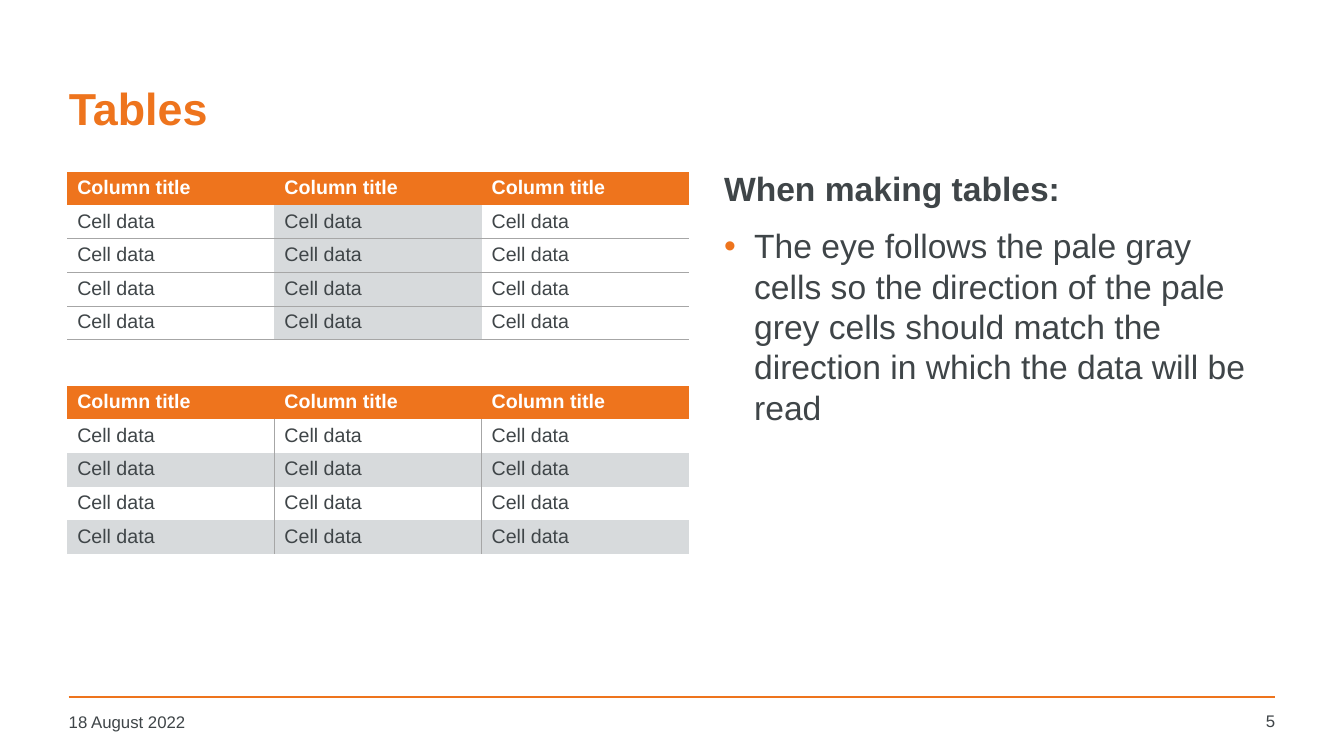
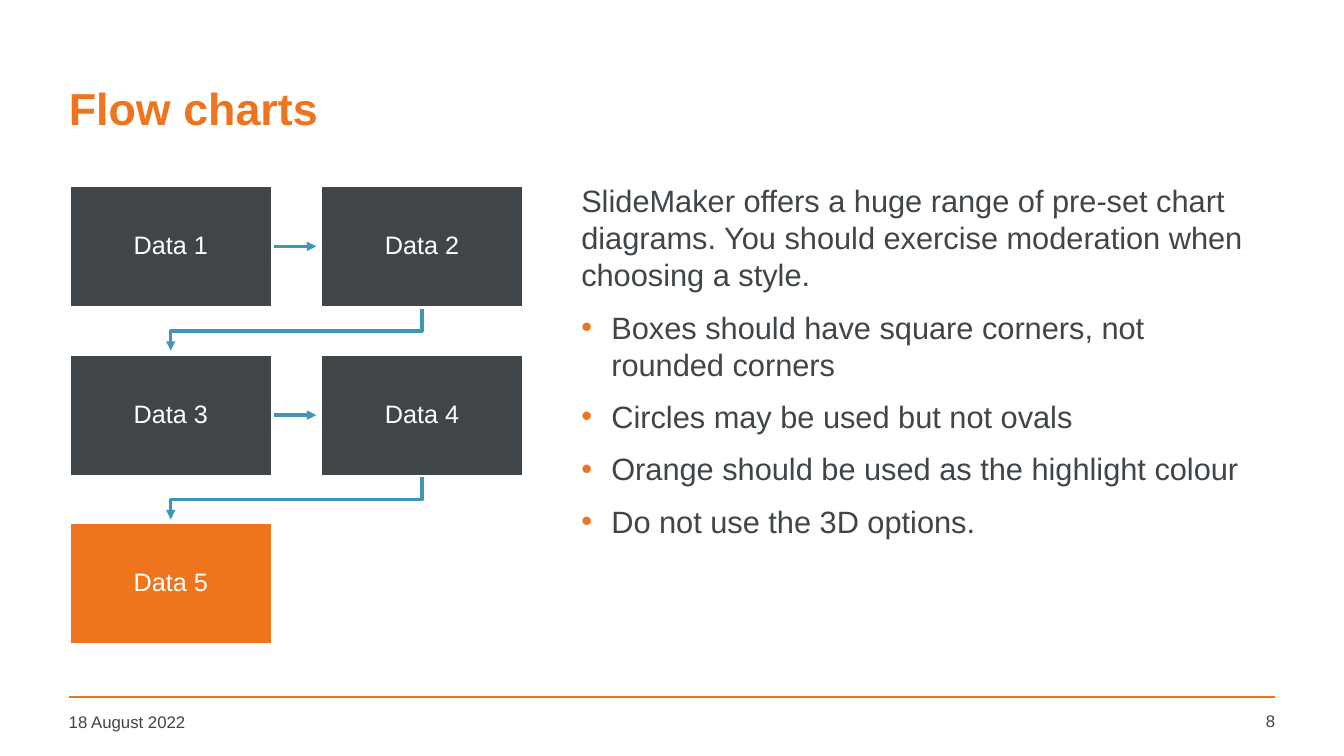
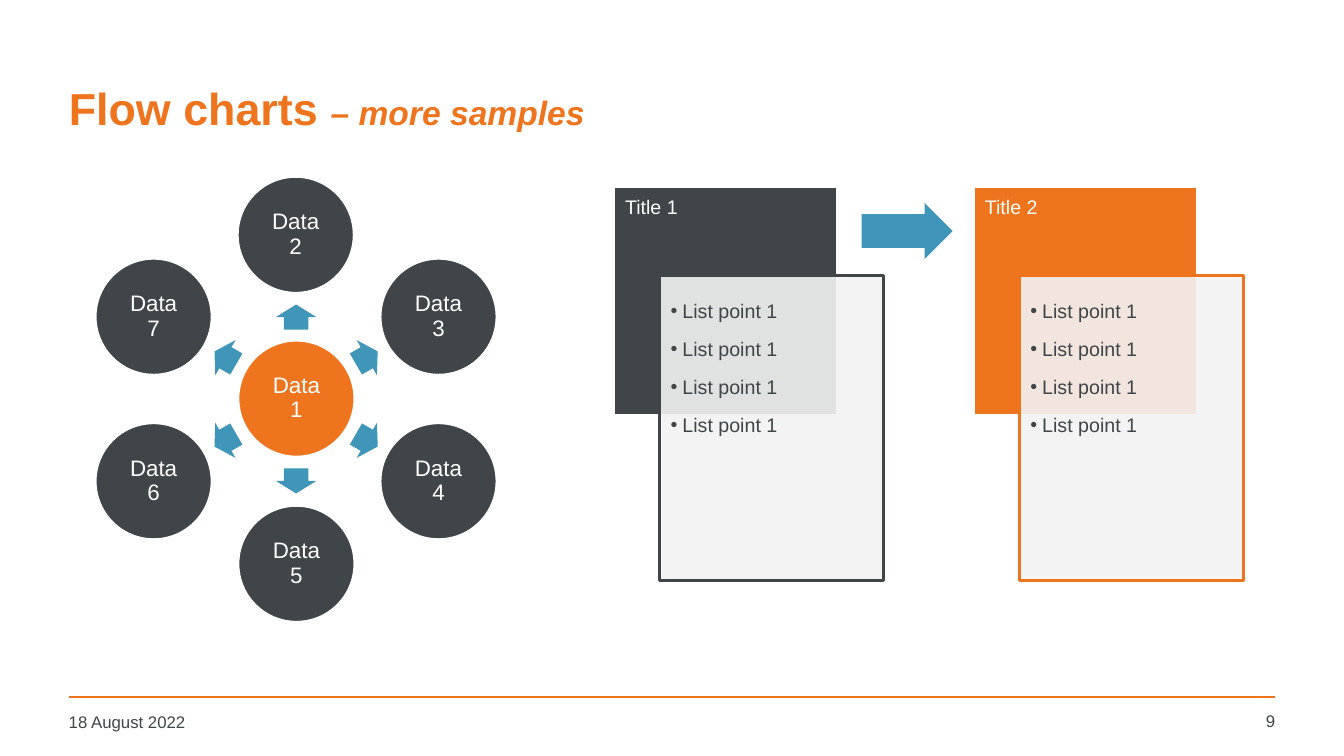
import math

import lxml.etree
import pptx
import pptx.dml.color
import pptx.enum.shapes
import pptx.enum.text
import pptx.oxml.ns
import pptx.util

RGBColor = pptx.dml.color.RGBColor
ORANGE = RGBColor(0xEE, 0x74, 0x1D)
CHARCOAL = RGBColor(0x3F, 0x45, 0x48)
BLUE = RGBColor(0x40, 0x96, 0xB8)
WHITE = RGBColor(0xFF, 0xFF, 0xFF)
PALE_GRAY = RGBColor(0xD7, 0xDA, 0xDC)
LINE_GRAY = RGBColor(0xA6, 0xA6, 0xA6)
PANEL_GRAY = RGBColor(0xF2, 0xF2, 0xF2)

FONT = "Arial"
EMU_PER_PX = 6350
SHAPE = pptx.enum.shapes.MSO_SHAPE
ALIGN = pptx.enum.text.PP_ALIGN
ANCHOR = pptx.enum.text.MSO_ANCHOR
Pt = pptx.util.Pt
qn = pptx.oxml.ns.qn


def px(*lengths):
    return [round(length) * EMU_PER_PX for length in lengths]


def add_node(parent, tag, **attributes):
    return lxml.etree.SubElement(parent, qn(tag), attributes)


def write(frame, text, size=14, color=CHARCOAL, bold=False, italic=False,
          align=ALIGN.LEFT, bullet=None, indent=0, spacing=None,
          before=0, after=0, join=False):
    if join:
        para = frame.paragraphs[-1]
    else:
        empty = not frame.paragraphs[0].runs
        para = frame.paragraphs[0] if empty else frame.add_paragraph()
        marks = para._p.get_or_add_pPr()
        shift = px(indent)[0]
        marks.set("marL", str(shift))
        marks.set("indent", str(-shift))
        if bullet is None:
            add_node(marks, "a:buNone")
        else:
            add_node(add_node(marks, "a:buClr"), "a:srgbClr", val=str(bullet))
            add_node(marks, "a:buFont", typeface=FONT)
            add_node(marks, "a:buChar", char="•")
        para.alignment = align
        para.space_before = Pt(before)
        para.space_after = Pt(after)
        if spacing:
            para.line_spacing = spacing
    span = para.add_run()
    span.text = text
    span.font.name = FONT
    span.font.size = Pt(size)
    span.font.bold = bold
    span.font.italic = italic
    span.font.color.rgb = color


def style_line(shape, color, width, arrow=False):
    shape.line.color.rgb = color
    shape.line.width = Pt(width)
    if arrow:
        add_node(shape.element.spPr.find(qn("a:ln")), "a:tailEnd", type="triangle")


def set_border(cell, side, color):
    line = add_node(cell._tc.get_or_add_tcPr(), "a:ln" + side, w=str(Pt(1)))
    if color is None:
        add_node(line, "a:noFill")
    else:
        add_node(add_node(line, "a:solidFill"), "a:srgbClr", val=str(color))


class Slides:
    def __init__(self):
        self.deck = pptx.Presentation()
        self.deck.slide_width, self.deck.slide_height = px(1920, 1080)
        self.page = None

    def start(self, title, number, subtitle=None, has_body=True):
        layout = self.deck.slide_layouts[1 if has_body else 5]
        self.page = self.deck.slides.add_slide(layout)
        frame = self.place(self.page.shapes.title, 84, 63, 1741, 180)
        frame.vertical_anchor = ANCHOR.MIDDLE
        write(frame, title, size=32, color=ORANGE, bold=True)
        if subtitle:
            write(frame, subtitle, size=24, color=ORANGE, bold=True,
                  italic=True, join=True)
        self.connector(98, 996, 1822, 996, ORANGE, 1)
        self.label("18 August 2022", 84, 1009, 423, 52)
        self.label(str(number), 1701, 1008, 135, 53, align=ALIGN.RIGHT)

    def place(self, box, left, top, width, height):
        box.left, box.top, box.width, box.height = px(left, top, width, height)
        frame = box.text_frame
        frame.auto_size = pptx.enum.text.MSO_AUTO_SIZE.NONE
        frame.word_wrap = True
        return frame

    def body(self, lead, points, left, top, width, height, size, bold=False):
        frame = self.place(self.page.placeholders[1], left, top, width, height)
        frame.vertical_anchor = ANCHOR.TOP
        write(frame, lead, size=size, bold=bold)
        for point in points:
            write(frame, point, size=size, bullet=ORANGE, indent=43,
                  before=size / 2)

    def label(self, text, left, top, width, height, align=ALIGN.LEFT):
        box = self.page.shapes.add_textbox(*px(left, top, width, height))
        box.text_frame.word_wrap = True
        write(box.text_frame, text, size=12, align=align)

    def connector(self, x1, y1, x2, y2, color, width, arrow=False):
        kind = pptx.enum.shapes.MSO_CONNECTOR.STRAIGHT
        line = self.page.shapes.add_connector(kind, *px(x1, y1, x2, y2))
        style_line(line, color, width, arrow)
        add_node(line.element.spPr, "a:effectLst")
        return line

    def elbow(self, start, *corners):
        builder = self.page.shapes.build_freeform(*px(*start))
        builder.add_line_segments([px(*corner) for corner in corners], close=False)
        shape = builder.convert_to_shape()
        shape.shadow.inherit = False
        shape.fill.background()
        style_line(shape, BLUE, 2.25, arrow=True)

    def shape(self, kind, left, top, width, height, fill, line=None, margin=16,
              anchor=ANCHOR.MIDDLE):
        box = self.page.shapes.add_shape(kind, *px(left, top, width, height))
        box.shadow.inherit = False
        box.fill.solid()
        box.fill.fore_color.rgb = fill
        if line is None:
            box.line.fill.background()
        else:
            style_line(box, line, 2)
        frame = box.text_frame
        frame.word_wrap = True
        frame.vertical_anchor = anchor
        inset = px(margin)[0]
        frame.margin_left = frame.margin_right = inset
        frame.margin_top = frame.margin_bottom = inset
        return box

    def node(self, kind, text, left, top, width, height, fill, size):
        box = self.shape(kind, left, top, width, height, fill, WHITE)
        write(box.text_frame, text, size=size, color=WHITE,
              align=ALIGN.CENTER, spacing=0.9)
        return box

    def arrow(self, left, top, width, height, angle=0):
        shape = self.shape(SHAPE.RIGHT_ARROW, left, top, width, height, BLUE)
        shape.adjustments[0] = 0.6
        shape.adjustments[1] = 0.5
        shape.rotation = angle

    def table(self, top, by_column):
        rows, columns = 5, 3
        grid = self.page.shapes.add_table(
            rows, columns, *px(96, top, columns * 296, rows * 48)).table
        grid.horz_banding = False
        for row in grid.rows:
            row.height = px(48)[0]
        for row in range(rows):
            for column in range(columns):
                cell = grid.cell(row, column)
                header = row == 0
                if by_column:
                    shaded = column == 1
                    ruled = {"T": row > 1, "B": row > 0}
                else:
                    shaded = row % 2 == 0
                    ruled = {"L": row > 0 and column > 0,
                             "R": row > 0 and column < columns - 1}
                for side in "LRTB":
                    set_border(cell, side, LINE_GRAY if ruled.get(side) else None)
                cell.fill.solid()
                cell.fill.fore_color.rgb = (
                    ORANGE if header else PALE_GRAY if shaded else WHITE)
                write(cell.text_frame, "Column title" if header else "Cell data",
                      color=WHITE if header else CHARCOAL, bold=header)

    def card(self, title, left, top, color):
        back = self.shape(SHAPE.RECTANGLE, left, top, 320, 327, color, WHITE,
                          anchor=ANCHOR.TOP)
        write(back.text_frame, title, color=WHITE, spacing=0.9)
        panel = self.shape(SHAPE.FLOWCHART_PROCESS, left + 65, top + 128, 320, 435,
                           PANEL_GRAY, color, anchor=ANCHOR.TOP)
        tint = panel.element.spPr.find(qn("a:solidFill"))[0]
        add_node(tint, "a:alpha", val="90000")
        for _ in range(4):
            write(panel.text_frame, "List point 1", bullet=CHARCOAL, indent=17,
                  spacing=1.5, after=2)


def tables_slide(slides):
    slides.start("Tables", 5)
    slides.table(245, by_column=True)
    slides.table(551, by_column=False)
    slides.body("When making tables:", [
        "The eye follows the pale gray cells so the direction of the pale grey "
        "cells should match the direction in which the data will be read",
    ], 1020, 233, 804, 730, size=24, bold=True)


def flow_slide(slides):
    slides.start("Flow charts", 8)
    left, top, width, height = 99, 265, 290, 174
    step_x, step_y = 359, 241
    links = []
    for row in range(2):
        y = top + row * step_y
        middle = y + height / 2
        links.append(slides.connector(left + width, middle, left + step_x - 6, middle,
                                      BLUE, 2.25, arrow=True))
        target_x = left + width / 2
        source_x = target_x + step_x
        bend_y = y + height + 34
        slides.elbow((source_x, y + height), (source_x, bend_y),
                     (target_x, bend_y), (target_x, y + step_y - 5))
    for index in range(5):
        row, column = divmod(index, 2)
        box = slides.node(SHAPE.RECTANGLE, f"Data {index + 1}",
                          left + column * step_x, top + row * step_y, width, height,
                          ORANGE if index == 4 else CHARCOAL, 18)
        if column == 0 and row < len(links):
            links[row].begin_connect(box, 3)
    slides.body(
        "SlideMaker offers a huge range of pre-set chart diagrams. You should "
        "exercise moderation when choosing a style.", [
            "Boxes should have square corners, not rounded corners",
            "Circles may be used but not ovals",
            "Orange should be used as the highlight colour",
            "Do not use the 3D options.",
        ], 816, 253, 996, 730, size=22)


def samples_slide(slides):
    slides.start("Flow charts ", 9, subtitle="– more samples", has_body=False)
    center_x, center_y, diameter = 423, 570, 167

    def circle(number, x, y, fill):
        slides.node(SHAPE.OVAL, f"Data {number}", x - diameter / 2, y - diameter / 2,
                    diameter, diameter, fill, 16)

    circle(1, center_x, center_y, ORANGE)
    for index in range(6):
        angle = (270 + 60 * index) % 360
        dx, dy = math.cos(math.radians(angle)), math.sin(math.radians(angle))
        slides.arrow(center_x + 117 * dx - 18, center_y + 117 * dy - 29, 36, 58, angle)
        circle(index + 2, center_x + 235 * dx, center_y + 235 * dy, CHARCOAL)
    slides.card("Title 1", 877, 266, CHARCOAL)
    slides.arrow(1231, 290, 130, 80)
    slides.card("Title 2", 1391, 266, ORANGE)


def main():
    slides = Slides()
    tables_slide(slides)
    flow_slide(slides)
    samples_slide(slides)
    slides.deck.save("out.pptx")


if __name__ == "__main__":
    main()
